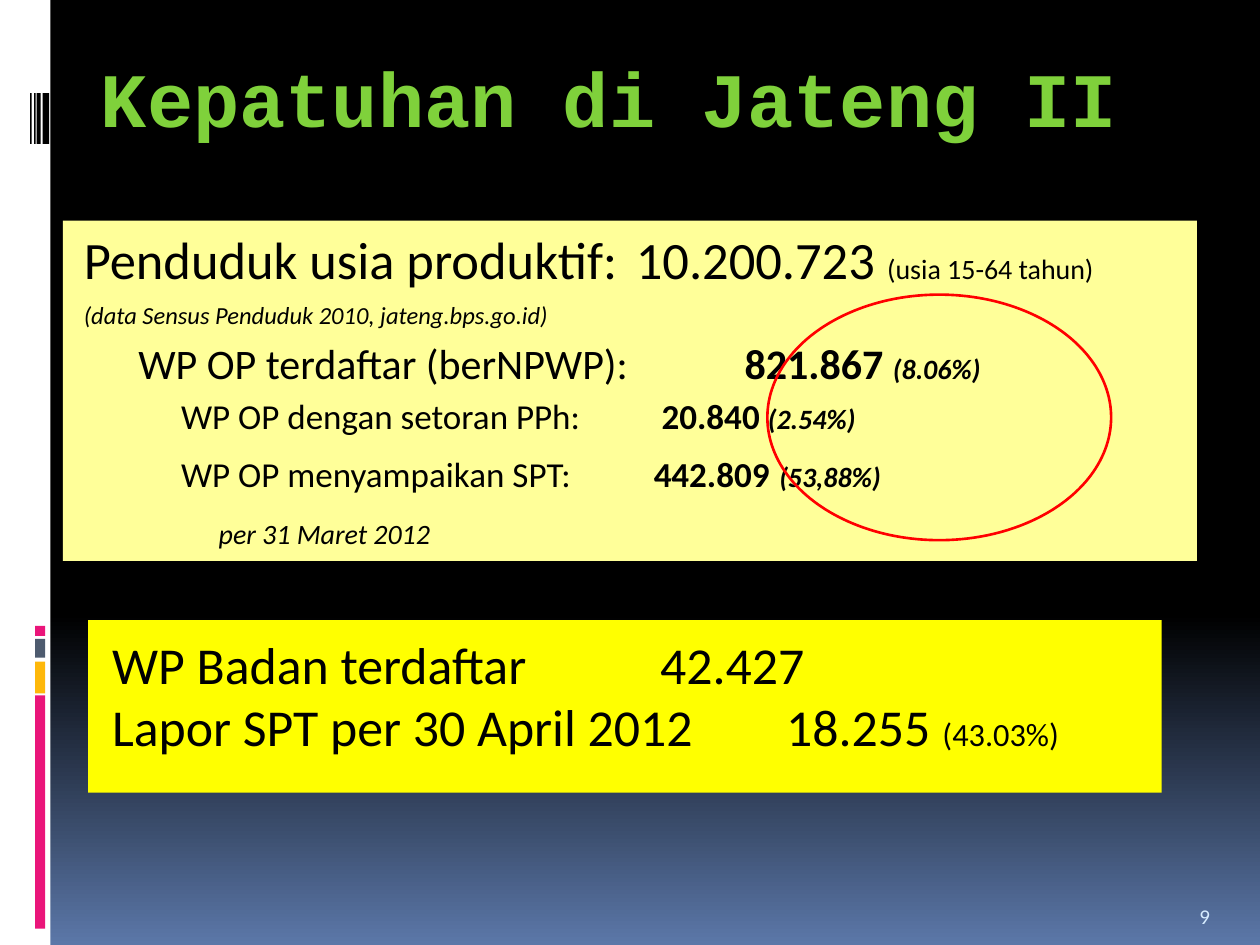
from pptx import Presentation
from pptx.dml.color import RGBColor
from pptx.enum.shapes import MSO_SHAPE
from pptx.enum.text import MSO_ANCHOR, MSO_AUTO_SIZE, PP_ALIGN
from pptx.util import Cm, Pt

RECT, OVAL = MSO_SHAPE.RECTANGLE, MSO_SHAPE.OVAL
TOP, MIDDLE, BOTTOM = MSO_ANCHOR.TOP, MSO_ANCHOR.MIDDLE, MSO_ANCHOR.BOTTOM
LEFT = PP_ALIGN.LEFT
NO_FIT = MSO_AUTO_SIZE.NONE

COLORS = {
    "black": "000000", "white": "FFFFFF", "blue": "5B77A8", "pink": "EA157A",
    "amber": "FEB80A", "slate": "4E5B6F", "cream": "FFFF99", "yellow": "FFFF00",
    "red": "FF0000", "green": "7FD13B", "pale": "D6ECFF",
}
RGB = {name: RGBColor.from_string(value) for name, value in COLORS.items()}


def add_box(x, y, w, h, color):
    sp = s.shapes.add_shape(RECT, Cm(x), Cm(y), Cm(w), Cm(h))
    sp.shadow.inherit = False
    sp.fill.solid()
    sp.fill.fore_color.rgb = RGB[color]
    sp.line.fill.background()
    return sp


def write(tf, paragraphs, color="black", font="Calibri", anchor=TOP):
    tf.word_wrap = True
    tf.auto_size = NO_FIT
    tf.vertical_anchor = anchor
    for i, (margin, indent, before, runs) in enumerate(paragraphs):
        p = tf.paragraphs[0] if i == 0 else tf.add_paragraph()
        p.alignment = LEFT
        p.space_before = Pt(before)
        pPr = p._p.get_or_add_pPr()
        pPr.set("marL", str(Cm(margin)))
        pPr.set("indent", str(Cm(indent)))
        for text, size, style in runs:
            r = p.add_run()
            r.text = text
            r.font.size = Pt(size)
            r.font.name = font
            r.font.bold = "b" in style
            r.font.italic = "i" in style
            r.font.color.rgb = RGB[color]


prs = Presentation()
prs.slide_width, prs.slide_height = Cm(25.4), Cm(19.05)
s = prs.slides.add_slide(prs.slide_layouts[5])

bg = s.background.fill
bg.gradient()
bg.gradient_angle = 270
for stop, position, color in zip(bg.gradient_stops, (0.65, 1), ("black", "blue")):
    stop.position = position
    stop.color.rgb = RGB[color]

add_box(0, 0, 1.02, 19.05, "white")
for y, h, color in [(14.02, 4.7, "pink"), (13.34, 0.64, "amber"),
                    (12.88, 0.38, "slate"), (12.62, 0.2, "pink")]:
    add_box(0.71, y, 0.2, h, color)
for x, w in [(0.86, 0.13), (0.74, 0.08), (0.69, 0.03), (0.61, 0.03)]:
    add_box(x, 1.88, w, 1.02, "black")

title = s.shapes.title
title.left, title.top, title.width, title.height = Cm(1.78), Cm(0.58), Cm(22.66), Cm(2.74)
write(title.text_frame, [(0, 0, 0, [("Kepatuhan di Jateng II", 44, "b")])],
      "green", "Courier New", MIDDLE)

personal = add_box(1.27, 4.45, 22.86, 6.86, "cream")
write(personal.text_frame, [
    (1.14, -0.97, 0, [("Penduduk usia produktif:\t10.200.723 ", 30, ""),
                      ("(usia 15-64 tahun)", 16, "")]),
    (1.14, -0.97, 5.5, [("(data Sensus Penduduk 2010, jateng.bps.go.id)", 14, "i")]),
    (2.06, -0.79, 4.8, [("WP OP terdaftar (berNPWP):\t\t", 24, ""),
                        ("821.867 ", 24, "b"), ("(8.06%)", 16, "bi")]),
    (2.77, -0.64, 4, [("WP OP dengan setoran PPh:\t\t ", 20, ""),
                      ("20.840 ", 20, "b"), ("(2.54%)", 16, "bi")]),
    (2.77, -0.64, 4.8, [("WP OP menyampaikan SPT:\t\t", 20, ""), ("442.809", 20, "b"),
                        (" ", 24, "b"), ("(53,88%)", 16, "bi")]),
    (3.53, -0.64, 12, [("per 31 Maret 2012", 16, "i")]),
])

number = s.shapes.add_textbox(Cm(23.93), Cm(17.83), Cm(1.27), Cm(1.02))
write(number.text_frame, [(0, 0, 0, [("9", 12, "")])], "pale", anchor=BOTTOM)

ring = s.shapes.add_shape(OVAL, Cm(15.47), Cm(5.94), Cm(6.93), Cm(4.95))
ring.shadow.inherit = False
ring.fill.background()
ring.line.color.rgb = RGB["red"]
ring.line.width = Pt(1.5)

corporate = add_box(1.78, 12.5, 21.64, 3.48, "yellow")
tf = corporate.text_frame
tf.margin_left, tf.margin_top = Cm(0.15), Cm(0.25)
write(tf, [
    (1.22, -0.89, 0, [("WP Badan terdaftar\t\t\t42.427", 29.6, "")]),
    (1.22, -0.89, 0, [("Lapor SPT per 30 April 2012\t\t18.255 ", 29.6, ""),
                      ("(43.03%)", 18.5, "")]),
])

prs.save("out.pptx")
